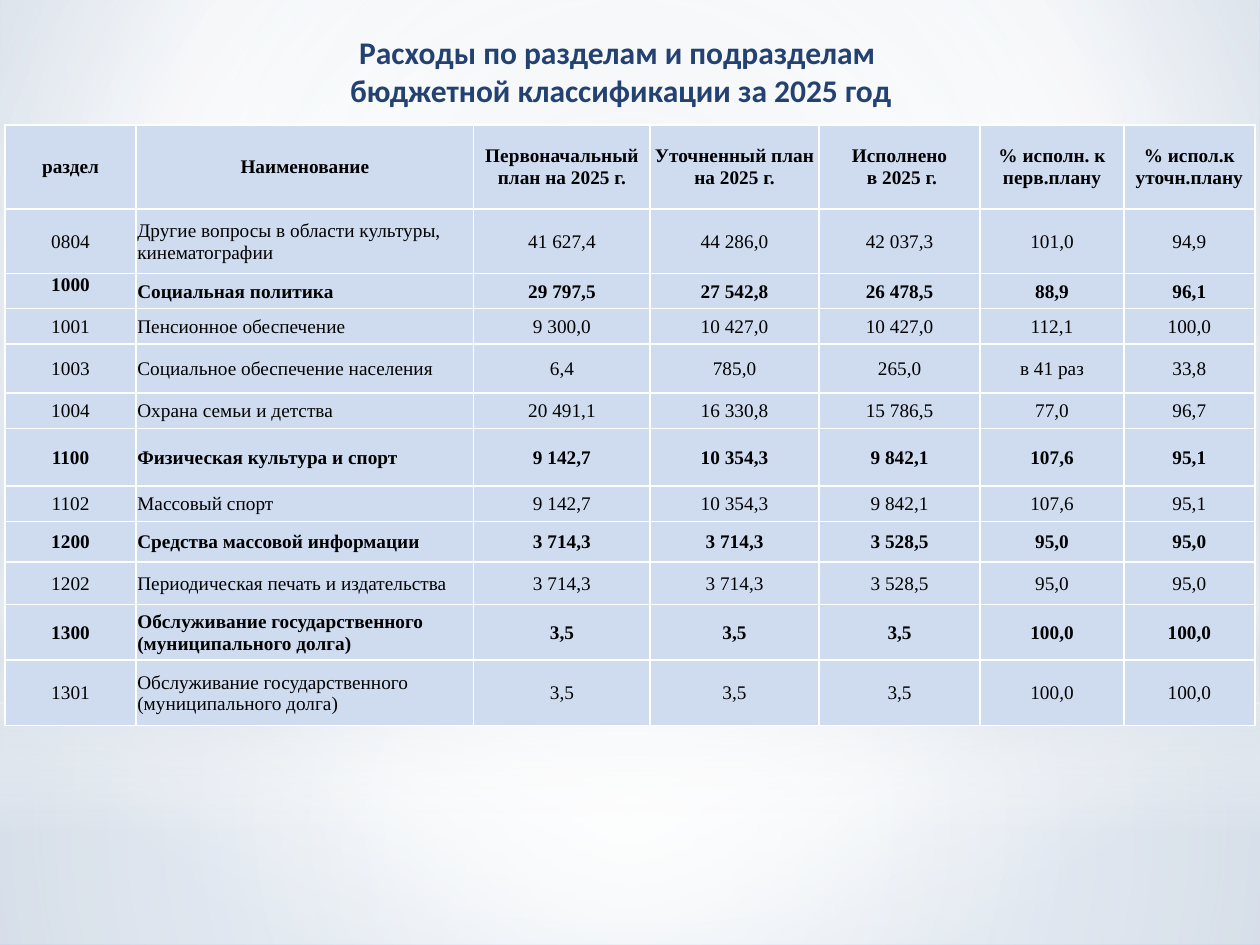
from lxml import etree
from pptx import Presentation
from pptx.dml.color import RGBColor
from pptx.enum.shapes import MSO_SHAPE
from pptx.enum.text import MSO_ANCHOR, MSO_AUTO_SIZE, PP_ALIGN
from pptx.oxml.ns import qn
from pptx.util import Inches, Pt

RECTANGLE, OVAL = MSO_SHAPE.RECTANGLE, MSO_SHAPE.OVAL
MIDDLE, TOP = MSO_ANCHOR.MIDDLE, MSO_ANCHOR.TOP
CENTER, LEFT = PP_ALIGN.CENTER, PP_ALIGN.LEFT

THEME = {
    "title": {"name": "Calibri", "size": Pt(18), "bold": True, "color": "234271"},
    "table": {"name": "Times New Roman", "size": Pt(11), "color": "000000"},
    "cell": "CFDCF0", "border": "FFFFFF", "border_width": Pt(1),
    "white": "FFFFFF", "mist": "E4E9EF", "sky": "D7DFE8", "steel": "A3B9D4",
}
WHITE, MIST = THEME["white"], THEME["mist"]
CENTERED = (50, 50, 50, 50)


def set_gradient(owner, stops, focus=None):
    """Fill with (position, color, opacity) stops: circular around focus, else downward."""
    gradient = next(owner.element.iter(qn("a:gradFill")))
    for child in list(gradient):
        gradient.remove(child)
    stop_list = etree.SubElement(gradient, qn("a:gsLst"))
    for position, color, opacity in stops:
        stop = etree.SubElement(stop_list, qn("a:gs"), pos=str(position * 1000))
        color_element = etree.SubElement(stop, qn("a:srgbClr"), val=color)
        if opacity < 100:
            etree.SubElement(color_element, qn("a:alpha"), val=str(opacity * 1000))
    if focus:
        circle = etree.SubElement(gradient, qn("a:path"), attrib={"path": "circle"})
        sides = {side: str(value * 1000) for side, value in zip("ltrb", focus)}
        etree.SubElement(circle, qn("a:fillToRect"), attrib=sides)
    else:
        etree.SubElement(gradient, qn("a:lin"), ang="5400000", scaled="0")


def write_paragraph(paragraph, text, alignment, font_format):
    paragraph.text = text
    paragraph.alignment = alignment
    for name, value in font_format.items():
        if name == "color":
            paragraph.font.color.rgb = RGBColor.from_string(value)
        else:
            setattr(paragraph.font, name, value)


presentation = Presentation()
presentation.slide_width, presentation.slide_height = Inches(10), Inches(7.5)
slide = presentation.slides.add_slide(presentation.slide_layouts[5])

# Background and its soft light layers
slide.background.fill.gradient()
set_gradient(slide, [(0, THEME["sky"], 100), (60, WHITE, 100), (100, THEME["steel"], 100)],
             (20, 10, 20, 60))
layers = [
    (RECTANGLE, 5.58, 1.92, [(0, WHITE, 91), (37, WHITE, 76), (100, MIST, 79)], CENTERED),
    (RECTANGLE, 0, 5.58, [(0, WHITE, 89), (48, WHITE, 62), (100, MIST, 79)], CENTERED),
    (RECTANGLE, 4.12, 2.5, [(0, WHITE, 0), (29, WHITE, 30), (45, MIST, 40),
                            (55, WHITE, 26), (65, MIST, 60), (100, WHITE, 0)], None),
    (OVAL, 1.75, 5.58, [(0, WHITE, 100), (56, WHITE, 0)], CENTERED),
]
for kind, top, height, stops, focus in layers:
    shape = slide.shapes.add_shape(kind, 0, Inches(top), Inches(10), Inches(height))
    shape.shadow.inherit = False
    shape.line.fill.background()
    shape.fill.gradient()
    set_gradient(shape, stops, focus)

# Title, brought in front of the layers
title = slide.shapes.title
slide.shapes.element.append(title.element)
title.left, title.top, title.width, title.height = map(Inches, (2.4, 0.21, 5, 0.71))
frame = title.text_frame
frame.word_wrap, frame.auto_size = True, MSO_AUTO_SIZE.SHAPE_TO_FIT_TEXT
frame.vertical_anchor = TOP
title_lines = ["Расходы по разделам и подразделам", " бюджетной классификации за 2025 год"]
for index, line in enumerate(title_lines):
    paragraph = frame.add_paragraph() if index else frame.paragraphs[0]
    write_paragraph(paragraph, line, CENTER, THEME["title"])

# Table data
column_widths = [1.04, 2.68, 1.4, 1.34, 1.28, 1.14, 1.04]
row_heights = [0.67, 0.51, 0.28, 0.28, 0.39, 0.28, 0.46, 0.28, 0.32, 0.34, 0.44, 0.52]
rows = [
    ["раздел", "Наименование", "Первоначальный план на 2025 г.", "Уточненный план на 2025 г.",
     "Исполнено\n в 2025 г.", "% исполн. к перв.плану", "% испол.к уточн.плану"],
    ["0804", "Другие вопросы в области культуры, кинематографии",
     "41 627,4", "44 286,0", "42 037,3", "101,0", "94,9"],
    ["1000", "Социальная политика", "29 797,5", "27 542,8", "26 478,5", "88,9", "96,1"],
    ["1001", "Пенсионное обеспечение", "9 300,0", "10 427,0", "10 427,0", "112,1", "100,0"],
    ["1003", "Социальное обеспечение населения", "6,4", "785,0", "265,0", "в 41 раз", "33,8"],
    ["1004", "Охрана семьи и детства", "20 491,1", "16 330,8", "15 786,5", "77,0", "96,7"],
    ["1100", "Физическая культура и спорт", "9 142,7", "10 354,3", "9 842,1", "107,6", "95,1"],
    ["1102", "Массовый спорт", "9 142,7", "10 354,3", "9 842,1", "107,6", "95,1"],
    ["1200", "Средства массовой информации", "3 714,3", "3 714,3", "3 528,5", "95,0", "95,0"],
    ["1202", "Периодическая печать и издательства",
     "3 714,3", "3 714,3", "3 528,5", "95,0", "95,0"],
    ["1300", "Обслуживание государственного (муниципального долга)",
     "3,5", "3,5", "3,5", "100,0", "100,0"],
    ["1301", "Обслуживание государственного (муниципального долга)",
     "3,5", "3,5", "3,5", "100,0", "100,0"],
]

# Table
table = slide.shapes.add_table(len(rows), len(column_widths), Inches(0.04), Inches(0.99),
                               Inches(sum(column_widths)), Inches(sum(row_heights))).table
for column, width in zip(table.columns, column_widths):
    column.width = Inches(width)
for row, height in zip(table.rows, row_heights):
    row.height = Inches(height)

for row_index, values in enumerate(rows):
    is_header = row_index == 0
    # Section codes end in 00; their rows stand out like the header
    font_format = {**THEME["table"], "bold": is_header or values[0].endswith("00")}
    margin = Inches(0 if is_header else 0.01)
    for column_index, text in enumerate(values):
        cell = table.cell(row_index, column_index)
        cell_format = {"margin_left": margin, "margin_top": margin, "margin_right": margin,
                       "margin_bottom": 0,
                       "vertical_anchor": TOP if text == "1000" else MIDDLE}
        for name, value in cell_format.items():
            setattr(cell, name, value)
        alignment = LEFT if column_index == 1 and not is_header else CENTER
        for index, line in enumerate(text.split("\n")):
            frame = cell.text_frame
            paragraph = frame.add_paragraph() if index else frame.paragraphs[0]
            write_paragraph(paragraph, line, alignment, font_format)
        # Borders come before the fill in the cell properties
        properties = cell._tc.get_or_add_tcPr()
        for side in ("a:lnL", "a:lnR", "a:lnT", "a:lnB"):
            border = etree.SubElement(properties, qn(side), w=str(THEME["border_width"]))
            border_fill = etree.SubElement(border, qn("a:solidFill"))
            etree.SubElement(border_fill, qn("a:srgbClr"), val=THEME["border"])
        cell.fill.solid()
        cell.fill.fore_color.rgb = RGBColor.from_string(THEME["cell"])

presentation.save("out.pptx")
